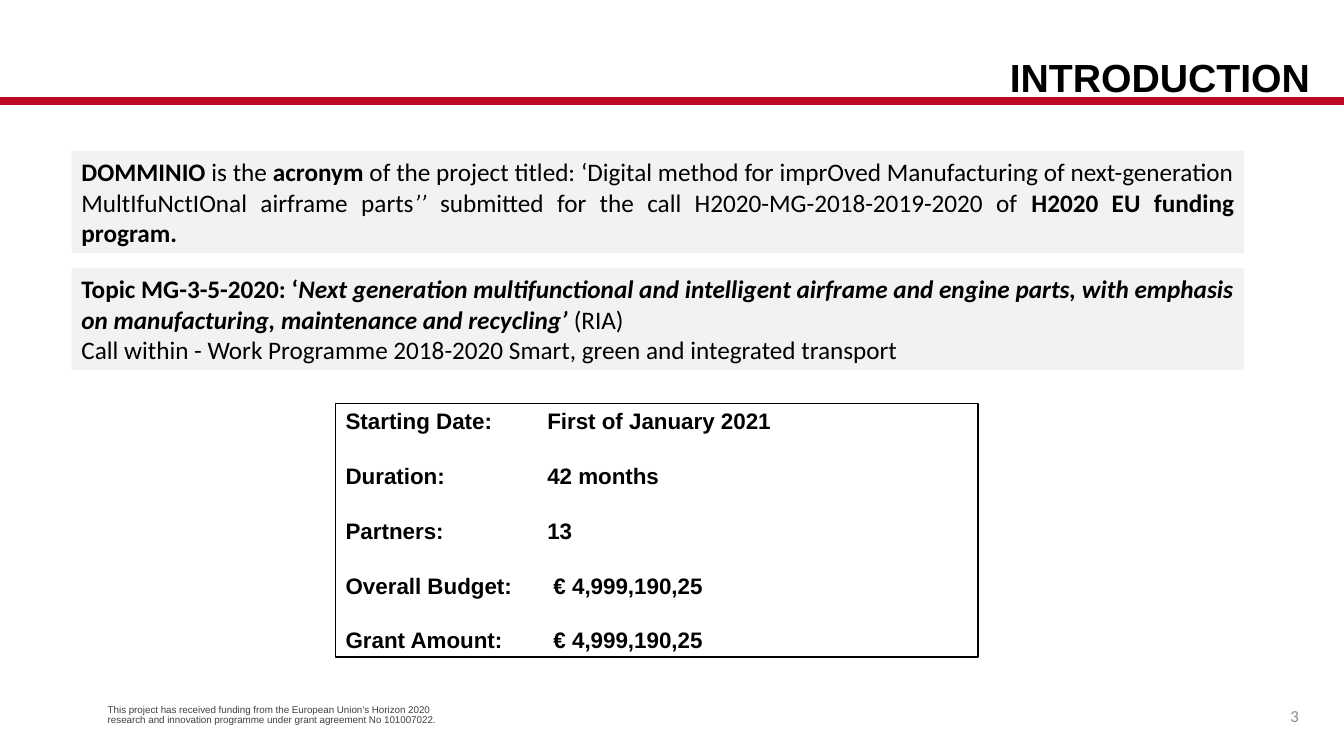
from lxml import etree
from pptx import Presentation
from pptx.dml.color import RGBColor
from pptx.enum.shapes import MSO_CONNECTOR as Connector, MSO_SHAPE as Shape
from pptx.enum.text import MSO_ANCHOR as Anchor, PP_ALIGN as Align
from pptx.oxml.ns import qn
from pptx.util import Inches, Pt

# Content: a paragraph is a list of (text, style) runs; b = bold, i = italic
TITLE = "INTRODUCTION"
SUMMARIES = [
    [[("DOMMINIO ", "b"), ("is the ", ""), ("acronym", "b"),
      (" of the project titled: ‘Digital method for imprOved Manufacturing of "
       "next-generation MultIfuNctIOnal airframe parts", ""),
      ("’’ ", "i"),
      ("submitted for the call H2020-MG-2018-2019-2020 of ", ""),
      ("H2020 EU funding program.", "b")]],
    [[("Topic MG-3-5-2020: ‘", "b"),
      ("Next generation multifunctional and intelligent airframe and engine parts, "
       "with emphasis on manufacturing, maintenance and recycling’ ", "bi"),
      ("(RIA)", "")],
     [("Call within - Work Programme 2018-2020 Smart, green and integrated transport", "")]],
]
FACTS = [
    ("Starting Date:", "First of January 2021"),
    ("Duration:", "42 months"),
    ("Partners:", "13"),
    ("Overall Budget:", " € 4,999,190,25"),
    ("Grant Amount:", " € 4,999,190,25"),
]
FUNDING = ("This project has received funding from the European Union’s Horizon 2020 "
           "research and innovation programme under grant agreement No 101007022.")
PAGE = "3"

# Layout in inches
WIDTH, HEIGHT = 13.33, 7.5
RULE_Y = 1
SUMMARY_LEFT, SUMMARY_TOP = 0.71, 1.5
SUMMARY_WIDTH, SUMMARY_HEIGHT, SUMMARY_PITCH = 11.63, 1.01, 1.16
FACTS_AREA = (3.33, 4, 6.37, 2.52)
VALUE_TAB = 2

BLACK, WHITE, RED = "000000", "FFFFFF", "BD0926"
PANEL, FOOTER_GREY, PAGE_GREY = "F2F2F2", "404040", "8C8C8C"


def rgb(color):
    return RGBColor.from_string(color)


def write(box, paragraphs, size, font, color=BLACK, align=Align.LEFT,
          anchor=Anchor.MIDDLE, line_spacing=None, gap=0, tab=None):
    frame = box.text_frame
    frame.word_wrap = True
    frame.vertical_anchor = anchor
    for index, runs in enumerate(paragraphs):
        paragraph = frame.add_paragraph() if index else frame.paragraphs[0]
        paragraph.alignment = align
        if line_spacing:
            paragraph.line_spacing = line_spacing
        if index and gap:
            paragraph.space_before = Pt(gap)
        if tab:
            stops = etree.SubElement(paragraph._p.get_or_add_pPr(), qn("a:tabLst"))
            etree.SubElement(stops, qn("a:tab"), pos=str(Inches(tab)), algn="l")
        for text, style in runs:
            run = paragraph.add_run()
            run.text = text
            run.font.name, run.font.size = font, Pt(size)
            run.font.bold, run.font.italic = "b" in style, "i" in style
            run.font.color.rgb = rgb(color)


def add_text(area, text, size, font, style="", **options):
    box = slide.shapes.add_textbox(*map(Inches, area))
    write(box, [[(text, style)]], size, font, **options)


def add_panel(area, fill, outline=None):
    panel = slide.shapes.add_shape(Shape.RECTANGLE, *map(Inches, area))
    panel.shadow.inherit = False
    panel.fill.solid()
    panel.fill.fore_color.rgb = rgb(fill)
    if outline:
        panel.line.color.rgb = rgb(outline)
        panel.line.width = Pt(1)
    else:
        panel.line.fill.background()
    return panel


deck = Presentation()
deck.slide_width, deck.slide_height = Inches(WIDTH), Inches(HEIGHT)
slide = deck.slides.add_slide(deck.slide_layouts[6])

# Red rule and title
rule = slide.shapes.add_connector(
    Connector.STRAIGHT, 0, Inches(RULE_Y), Inches(WIDTH), Inches(RULE_Y))
rule.line.color.rgb = rgb(RED)
rule.line.width = Pt(6)
etree.SubElement(rule._element.spPr, qn("a:effectLst"))
add_text((4.3, 0.53, 8.79, 0.4), TITLE, 28, "Arial", "b",
         align=Align.RIGHT, anchor=Anchor.TOP, line_spacing=0.9)

# Project summary panels
for row, paragraphs in enumerate(SUMMARIES):
    panel = add_panel((SUMMARY_LEFT, SUMMARY_TOP + row * SUMMARY_PITCH,
                       SUMMARY_WIDTH, SUMMARY_HEIGHT), PANEL)
    write(panel, paragraphs, 18, "Calibri", align=Align.JUSTIFY)

# Key facts, values aligned on one tab stop
facts_box = add_panel(FACTS_AREA, WHITE, BLACK)
write(facts_box, [[(f"{label}\t{value}", "b")] for label, value in FACTS],
      16, "Arial", gap=20, tab=VALUE_TAB)

# Footer
add_text((0.97, 6.86, 3.58, 0.47), FUNDING, 7, "Arial",
         color=FOOTER_GREY, line_spacing=0.9)
add_text((9.98, 6.9, 3, 0.4), PAGE, 12, "Calibri", color=PAGE_GREY, align=Align.RIGHT)

deck.save("out.pptx")
